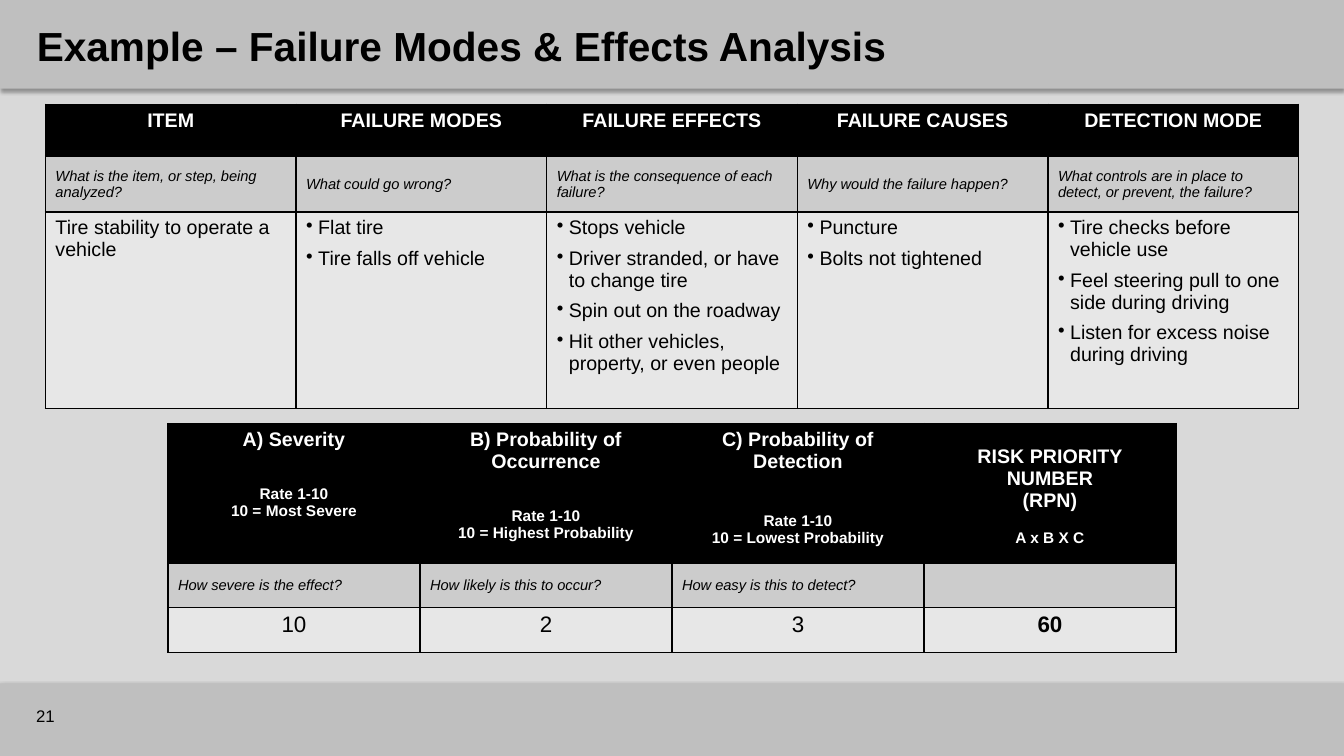
from dataclasses import dataclass

from lxml.etree import SubElement
from pptx import Presentation
from pptx.dml.color import RGBColor
from pptx.enum.shapes import MSO_SHAPE as Preset
from pptx.enum.text import MSO_ANCHOR as Anchor, PP_ALIGN as Align
from pptx.oxml import parse_xml
from pptx.oxml.ns import nsdecls, qn
from pptx.util import Emu, Inches, Pt

COLORS = {"page": "D9D9D9", "bar": "BFBFBF", "ink": "000000", "white": "FFFFFF",
          "prompt": "CCCCCC", "entry": "E7E7E7"}
FONT = "Arial"
SLIDE_WIDTH, SLIDE_HEIGHT = Inches(13.33), Inches(7.5)
CELL_MARGIN, BULLET_INDENT = Inches(0.05), Inches(0.12)


@dataclass(frozen=True)
class Style:
    size: float
    color: str = "ink"
    bold: bool = False
    italic: bool = False


@dataclass(frozen=True)
class Line:
    """One paragraph; a line feed in its text is a line break."""
    text: str
    style: Style
    align: Align = Align.LEFT
    before: float = 0
    bullet: bool = False


@dataclass(frozen=True)
class Area:
    """Place on the slide, in percent of its width and height."""
    left: float
    top: float
    width: float
    height: float

    def box(self) -> tuple[Emu, Emu, Emu, Emu]:
        return across(self.left), down(self.top), across(self.width), down(self.height)


@dataclass(frozen=True)
class Cell:
    lines: list[Line]
    fill: str
    anchor: Anchor = Anchor.TOP
    extra_top: float = 0


@dataclass(frozen=True)
class Grid:
    """Table with equal columns; lengths in percent of the slide."""
    left: float
    top: float
    column: float
    heights: list[float]
    rows: list[list[Cell]]


TITLE, NUMBER = Style(29, bold=True), Style(12)
HEAD, RATING = Style(14, "white", bold=True), Style(11, "white", bold=True)
PROMPT, ENTRY = Style(10.5, italic=True), Style(14)
SCORE, TOTAL = Style(16), Style(16, bold=True)


def across(percent: float) -> Emu:
    return Emu(round(SLIDE_WIDTH * percent / 100))


def down(percent: float) -> Emu:
    return Emu(round(SLIDE_HEIGHT * percent / 100))


def rgb(name: str) -> RGBColor:
    return RGBColor.from_string(COLORS[name])


def header(*lines: Line, extra_top: float = 0) -> Cell:
    return Cell(list(lines), "ink", extra_top=extra_top)


def centered(text: str, style: Style = HEAD, before: float = 0) -> Line:
    return Line(text, style, Align.CENTER, before)


def prompt(text: str) -> Cell:
    return Cell([Line(text, PROMPT)] if text else [], "prompt", Anchor.MIDDLE)


def bullets(*texts: str) -> Cell:
    return Cell([Line(text, ENTRY, bullet=True) for text in texts], "entry")


def score(text: str, style: Style = SCORE) -> Cell:
    return Cell([centered(text, style)], "entry")


def write(frame, lines: list[Line]) -> None:
    for index, line in enumerate(lines):
        para = frame.paragraphs[0] if index == 0 else frame.add_paragraph()
        para.alignment = line.align
        if line.before:
            para.space_before = Pt(line.before)
        if line.bullet:
            para.space_after = Pt(6)
            props = para._p.get_or_add_pPr()
            props.set("marL", str(BULLET_INDENT))
            props.set("indent", str(-BULLET_INDENT))
            SubElement(props, qn("a:buChar"), char="•")
        for part, text in enumerate(line.text.split("\n")):
            if part:
                para.add_line_break()
            span = para.add_run()
            span.text = text
            font = span.font
            font.name, font.size = FONT, Pt(line.style.size)
            font.bold, font.italic = line.style.bold, line.style.italic
            font.color.rgb = rgb(line.style.color)


def add_bar(page, area: Area) -> None:
    bar = page.shapes.add_shape(Preset.RECTANGLE, *area.box())
    bar.fill.solid()
    bar.fill.fore_color.rgb = rgb("bar")
    bar.line.fill.background()
    bar.shadow.inherit = False
    effects = bar._element.spPr.find(qn("a:effectLst"))
    effects.append(parse_xml(
        f'<a:outerShdw {nsdecls("a")} blurRad="{Pt(3.1)}" dist="{Pt(1.8)}" dir="5400000" '
        f'algn="t" rotWithShape="0"><a:srgbClr val="{COLORS["ink"]}">'
        '<a:alpha val="35000"/></a:srgbClr></a:outerShdw>'))


def add_text(page, area: Area, line: Line) -> None:
    frame = page.shapes.add_textbox(*area.box()).text_frame
    frame.word_wrap = True
    frame.vertical_anchor = Anchor.MIDDLE
    write(frame, [line])


def add_borders(cell) -> None:
    props = cell._tc.get_or_add_tcPr()
    for index, side in enumerate("LRTB"):
        props.insert(index, parse_xml(
            f'<a:ln{side} {nsdecls("a")} w="{Pt(1)}"><a:solidFill>'
            f'<a:srgbClr val="{COLORS["ink"]}"/></a:solidFill></a:ln{side}>'))


def add_grid(page, grid: Grid) -> None:
    count = len(grid.rows[0])
    area = Area(grid.left, grid.top, grid.column * count, sum(grid.heights))
    table = page.shapes.add_table(len(grid.rows), count, *area.box()).table
    table.first_row = table.horz_banding = False
    for column in table.columns:
        column.width = across(grid.column)
    for r, (height, row) in enumerate(zip(grid.heights, grid.rows)):
        table.rows[r].height = down(height)
        for c, content in enumerate(row):
            cell = table.cell(r, c)
            cell.fill.solid()
            cell.fill.fore_color.rgb = rgb(content.fill)
            cell.vertical_anchor = content.anchor
            cell.margin_top = CELL_MARGIN + Pt(content.extra_top)
            add_borders(cell)
            write(cell.text_frame, content.lines)


FAILURES = Grid(3.38, 13.8, 18.65, [6.85, 7.4, 25.95], [
    [header(centered(name)) for name in (
        "ITEM", "FAILURE MODES", "FAILURE EFFECTS", "FAILURE CAUSES", "DETECTION MODE")],
    [prompt(question) for question in (
        "What is the item, or step, being analyzed?", "What could go wrong?",
        "What is the consequence of each failure?", "Why would the failure happen?",
        "What controls are in place to detect, or prevent, the failure?")],
    [Cell([Line("Tire stability to operate a vehicle", ENTRY)], "entry"),
     bullets("Flat tire", "Tire falls off vehicle"),
     bullets("Stops vehicle", "Driver stranded, or have to change tire",
             "Spin out on the roadway", "Hit other vehicles, property, or even people"),
     bullets("Puncture", "Bolts not tightened"),
     bullets("Tire checks before vehicle use", "Feel steering pull to one side during driving",
             "Listen for excess noise during driving")],
])

RATINGS = Grid(12.5, 56, 18.75, [18.5, 5.85, 5.95], [
    [header(centered(name), centered(f"Rate 1-10\n10 = {top}", RATING, gap))
     for name, top, gap in (
         ("A) Severity", "Most Severe", 25),
         ("B) Probability of Occurrence", "Highest Probability", 25),
         ("C) Probability of Detection", "Lowest Probability", 28.5))]
    + [header(centered("RISK PRIORITY NUMBER\n(RPN)"), centered("A x B X C", RATING, 12.5),
              extra_top=12.5)],
    [prompt(question) for question in (
        "How severe is the effect?", "How likely is this to occur?",
        "How easy is this to detect?", "")],
    [score("10"), score("2"), score("3"), score("60", TOTAL)],
])


def main() -> None:
    deck = Presentation()
    deck.slide_width, deck.slide_height = SLIDE_WIDTH, SLIDE_HEIGHT
    page = deck.slides.add_slide(deck.slide_layouts[6])
    page.background.fill.solid()
    page.background.fill.fore_color.rgb = rgb("page")
    add_bar(page, Area(0, 90.4, 100, 9.6))
    add_bar(page, Area(0, 0, 100, 11.75))
    add_text(page, Area(2, 1.85, 97, 8.3), Line("Example – Failure Modes & Effects Analysis", TITLE))
    add_text(page, Area(1.95, 92, 7.5, 5.35), Line("21", NUMBER))
    add_grid(page, FAILURES)
    add_grid(page, RATINGS)
    deck.save("out.pptx")


if __name__ == "__main__":
    main()
